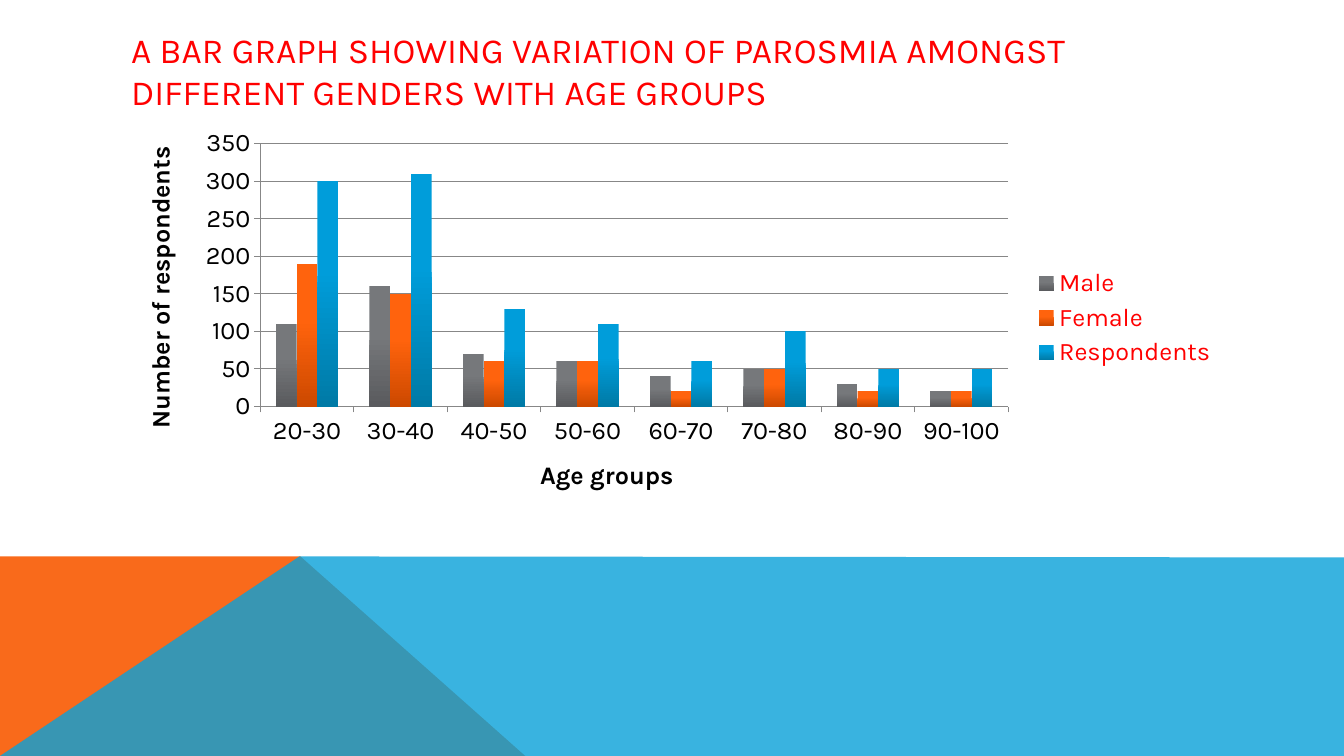
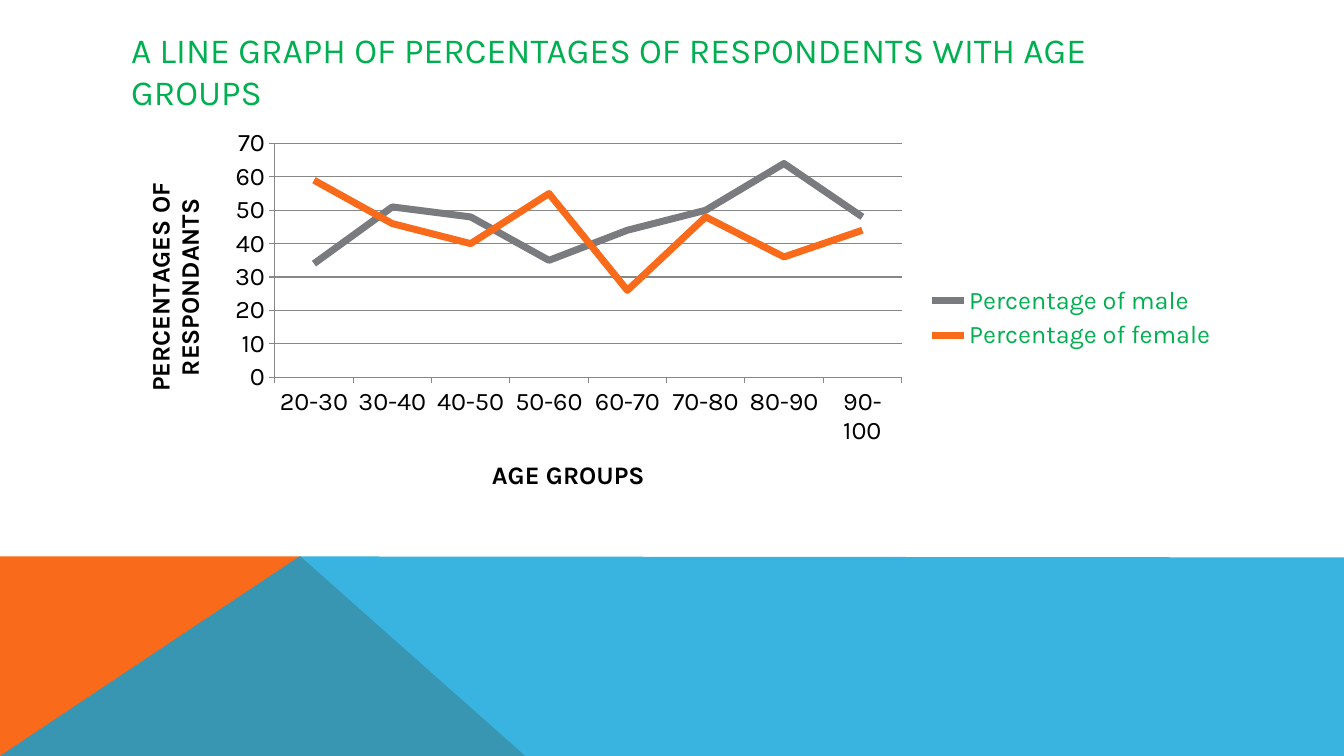
import pptx
import pptx.chart.data
import pptx.dml.color
import pptx.enum.chart
import pptx.enum.text
import pptx.util
from lxml import etree

Inches = pptx.util.Inches
Pt = pptx.util.Pt
ChartType = pptx.enum.chart.XL_CHART_TYPE

FONT = "Karla"
BLACK = "000000"
GRID_GRAY = "878787"
GRAY, ORANGE, BLUE = "797B7E", "F96A1B", "08A1D9"
# Top and bottom colour of the bars, by series
BAR_SHADES = [("76787B", "5A5B5E"), ("FF630D", "CC4900"), ("009DDA", "007AA6")]
LINE_COLORS = [GRAY, ORANGE]
AGE_GROUPS = ["20-30", "30-40", "40-50", "50-60", "60-70", "70-80", "80-90", "90-100"]
FRAME_LEFT, FRAME_WIDTH = Inches(1.2), Inches(10.97)


def rgb(color):
    return pptx.dml.color.RGBColor.from_string(color)


def style_font(font, size, color, bold=False):
    font.name = FONT
    font.size = Pt(size)
    font.bold = bold
    font.color.rgb = rgb(color)


presentation = pptx.Presentation()
presentation.slide_width = Inches(13.33)
presentation.slide_height = Inches(7.5)
layout = presentation.slide_layouts[5]

graphs = [
    {
        "title": "A BAR GRAPH SHOWING VARIATION OF PAROSMIA AMONGST DIFFERENT GENDERS WITH AGE GROUPS",
        "accent": "FF0000",
        "type": ChartType.COLUMN_CLUSTERED,
        "axis_titles": ("Age groups", "Number of respondents"),
        "maximum": 350,
        "step": 50,
        "series": {
            "Male": [110, 160, 70, 60, 40, 50, 30, 20],
            "Female": [190, 150, 60, 60, 20, 50, 20, 20],
            "Respondents": [300, 310, 130, 110, 60, 100, 50, 50],
        },
    },
    {
        "title": "A LINE GRAPH OF PERCENTAGES OF RESPONDENTS WITH AGE GROUPS",
        "accent": "00B050",
        "type": ChartType.LINE,
        "axis_titles": ("AGE GROUPS", "PERCENTAGES OF RESPONDANTS"),
        "maximum": 70,
        "step": 10,
        "series": {
            "Percentage of male": [34, 51, 48, 35, 44, 50, 64, 48],
            "Percentage of female": [59, 46, 40, 55, 26, 48, 36, 44],
        },
    },
]
slides = [presentation.slides.add_slide(layout) for graph in graphs]

# Bands at the foot, drawn on a slide and then moved to the shared layout
bands = [
    (ORANGE, 100, [(0, 7.5), (0, 5.52), (2.98, 5.52), (5.21, 7.5)]),
    (BLUE, 80, [(0, 7.5), (2.97, 5.52), (13.33, 5.53), (13.33, 7.5)]),
]
for index, (color, opacity, points) in enumerate(bands):
    corners = [(Inches(x), Inches(y)) for x, y in points]
    builder = slides[0].shapes.build_freeform(*corners[0])
    builder.add_line_segments(corners[1:], close=True)
    band = builder.convert_to_shape()
    band.shadow.inherit = False
    band.fill.solid()
    band.fill.fore_color.rgb = rgb(color)
    band.line.fill.background()
    if opacity < 100:
        namespace = pptx.oxml.ns.qn("a:alpha")
        fill_color = band.element.spPr.find(".//" + pptx.oxml.ns.qn("a:srgbClr"))
        etree.SubElement(fill_color, namespace).set("val", str(opacity * 1000))
    layout.shapes.element.insert(2 + index, band.element)

for slide, graph in zip(slides, graphs):
    title = slide.shapes.title
    title.left, title.top = FRAME_LEFT, Inches(0.4)
    title.width, title.height = FRAME_WIDTH, Inches(0.6)
    title.text_frame.text = graph["title"]
    title.text_frame.word_wrap = True
    title.text_frame.auto_size = pptx.enum.text.MSO_AUTO_SIZE.NONE
    title.text_frame.vertical_anchor = pptx.enum.text.MSO_ANCHOR.MIDDLE
    paragraph = title.text_frame.paragraphs[0]
    paragraph.alignment = pptx.enum.text.PP_ALIGN.LEFT
    style_font(paragraph.runs[0].font, 25.2, graph["accent"])

    data = pptx.chart.data.CategoryChartData()
    data.categories = AGE_GROUPS
    for name, values in graph["series"].items():
        data.add_series(name, values)
    chart = slide.shapes.add_chart(
        graph["type"], FRAME_LEFT, Inches(1.2), FRAME_WIDTH, Inches(3.91), data
    ).chart
    style_font(chart.font, 18, BLACK)
    chart.has_title = False
    chart.has_legend = True
    chart.legend.position = pptx.enum.chart.XL_LEGEND_POSITION.RIGHT
    chart.legend.include_in_layout = False
    style_font(chart.legend.font, 18, graph["accent"])

    for axis, text in zip((chart.category_axis, chart.value_axis), graph["axis_titles"]):
        axis.major_tick_mark = pptx.enum.chart.XL_TICK_MARK.OUTSIDE
        axis.format.line.color.rgb = rgb(GRID_GRAY)
        axis.axis_title.text_frame.text = text
        run = axis.axis_title.text_frame.paragraphs[0].runs[0]
        style_font(run.font, 18, BLACK, bold=True)
    chart.value_axis.minimum_scale = 0
    chart.value_axis.maximum_scale = graph["maximum"]
    chart.value_axis.major_unit = graph["step"]
    chart.value_axis.major_gridlines.format.line.color.rgb = rgb(GRID_GRAY)

    plot = chart.plots[0]
    plot.vary_by_categories = False
    if graph["type"] == ChartType.COLUMN_CLUSTERED:
        plot.gap_width = 150
        plot.overlap = 0
        for series, shades in zip(plot.series, BAR_SHADES):
            fill = series.format.fill
            fill.gradient()
            fill.gradient_angle = 270
            for stop, position, shade in zip(fill.gradient_stops, (0.4, 1), shades):
                stop.position = position
                stop.color.rgb = rgb(shade)
    else:
        for series, color in zip(plot.series, LINE_COLORS):
            series.smooth = False
            series.marker.style = pptx.enum.chart.XL_MARKER_STYLE.NONE
            series.format.line.width = Pt(5)
            series.format.line.color.rgb = rgb(color)

presentation.save("out.pptx")
